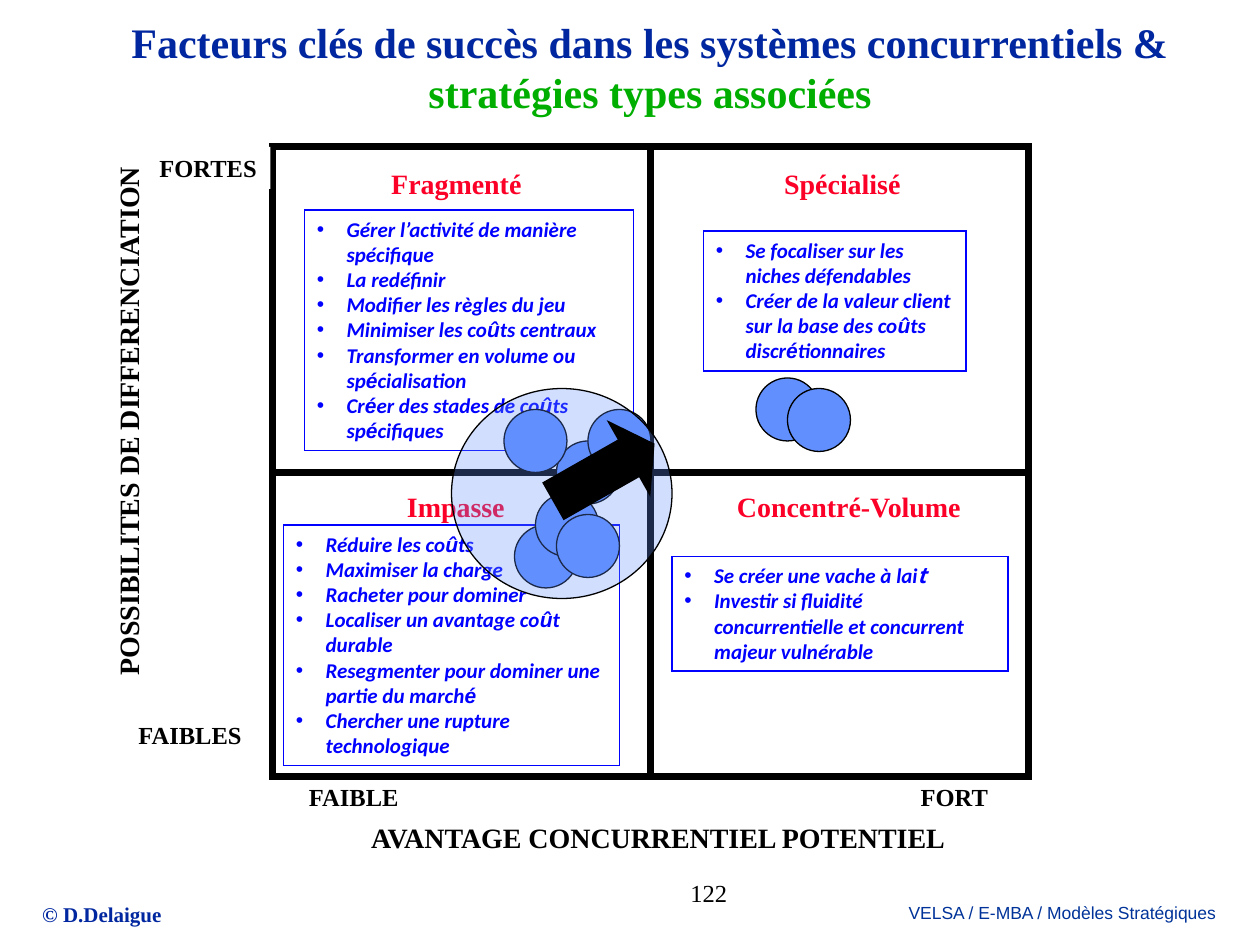
from lxml.etree import SubElement
from pptx import Presentation
from pptx.dml.color import RGBColor
from pptx.enum.shapes import MSO_CONNECTOR as Line, MSO_SHAPE as Preset
from pptx.enum.text import MSO_ANCHOR as Anchor, PP_ALIGN as Align
from pptx.oxml.ns import qn
from pptx.util import Pt

NAVY = RGBColor(0x00, 0x27, 0x9F)
FOOTER_BLUE = RGBColor(0x00, 0x33, 0x99)
GREEN = RGBColor(0x00, 0xAE, 0x00)
RED = RGBColor(0xFC, 0x01, 0x28)
BLUE = RGBColor(0x00, 0x01, 0xFF)
SKY = RGBColor(0x61, 0x8F, 0xFD)
BLACK = RGBColor(0x00, 0x00, 0x00)
WHITE = RGBColor(0xFF, 0xFF, 0xFF)
SERIF = "Times New Roman"

QUADRANTS = [
    ("Fragmenté", (216.5, 91.5, 92), (174, 120, 188, 137.5), "Arial", [
        "Gérer l’activité de manière spécifique",
        "La redéfinir",
        "Modifier les règles du jeu",
        "Minimiser les co|û|ts centraux",
        "Transformer en volume ou sp|é|cialisation",
        "Cr|é|er des stades de co|û|ts sp|é|cifiques"]),
    ("Spécialisé", (441, 91.5, 84), (402, 132, 150, 80), "Arial", [
        "Se focaliser sur les niches défendables",
        "Créer de la valeur client sur la base des co|û|ts discr|é|tionnaires"]),
    ("Impasse", (225.5, 276, 72), (162, 300, 192, 137.5), "Arial", [
        "Réduire les co|û|ts",
        "Maximiser la charge",
        "Racheter pour dominer",
        "Localiser un avantage co|û|t durable",
        "Resegmenter pour dominer une partie du march|é",
        "Chercher une rupture technologique"]),
    ("Concentré-Volume", (414, 276, 146), (384, 318, 192, 65.5), "Noto Sans CJK JP", [
        "Se créer une vache à lai|t",
        "Investir si fluidité concurrentielle et concurrent majeur vulnérable"]),
]
COMPETITORS = [(294, 300), (306, 282), (318, 294), (318, 252),
               (288, 234), (336, 234), (432, 216), (450, 222)]


def write(paragraph, text, *, size, color=BLACK, font=SERIF, bold=True, italic=False):
    run = paragraph.add_run()
    run.text = text
    face = run.font
    face.name, face.size, face.bold, face.italic = font, Pt(size), bold, italic
    face.color.rgb = color


def add_label(slide, text, left, top, width, height, *, align=Align.LEFT,
              fill=None, wrap=False, rotation=0, **style):
    label = slide.shapes.add_textbox(Pt(left), Pt(top), Pt(width), Pt(height))
    label.rotation = rotation
    if fill is not None:
        label.fill.solid()
        label.fill.fore_color.rgb = fill
    label.text_frame.word_wrap = wrap
    paragraph = label.text_frame.paragraphs[0]
    paragraph.alignment = align
    write(paragraph, text, **style)
    return label


def add_outline(slide, preset, left, top, width, height, *,
                fill=None, alpha=None, line=BLACK, weight=0.75):
    outline = slide.shapes.add_shape(preset, Pt(left), Pt(top), Pt(width), Pt(height))
    outline.shadow.inherit = False
    outline.line.color.rgb = line
    outline.line.width = Pt(weight)
    props = outline._element.spPr
    SubElement(props.find(qn("a:ln")), qn("a:miter")).set("lim", "800000")
    if fill is None:
        outline.fill.background()
    else:
        outline.fill.solid()
        outline.fill.fore_color.rgb = fill
    if alpha is not None:
        tint = props.find(qn("a:solidFill"))[0]
        SubElement(tint, qn("a:alpha")).set("val", str(alpha * 1000))
    return outline


def add_divider(slide, x1, y1, x2, y2):
    divider = slide.shapes.add_connector(Line.STRAIGHT, Pt(x1), Pt(y1), Pt(x2), Pt(y2))
    divider.line.color.rgb = BLACK
    divider.line.width = Pt(4)
    SubElement(divider._element.spPr, qn("a:effectLst"))
    return divider


def add_strategies(slide, bounds, strategies, accent_font):
    panel = add_outline(slide, Preset.RECTANGLE, *bounds, line=BLUE)
    frame = panel.text_frame
    frame.word_wrap = True
    frame.vertical_anchor = Anchor.TOP
    for index, strategy in enumerate(strategies):
        paragraph = frame.add_paragraph() if index else frame.paragraphs[0]
        paragraph.alignment = Align.LEFT
        props = paragraph._p.get_or_add_pPr()
        props.set("marL", str(Pt(17)))
        props.set("indent", str(-Pt(17)))
        SubElement(props, qn("a:buFont")).set("typeface", "Arial")
        SubElement(props, qn("a:buChar")).set("char", "•")
        for part, text in enumerate(strategy.split("|")):
            write(paragraph, text, size=12, color=BLUE, italic=True,
                  font=accent_font if part % 2 else "Calibri")


def add_title(slide):
    title = add_label(slide, "Facteurs clés de succès dans les systèmes concurrentiels & ",
                      50.5, 12, 642, 55, align=Align.CENTER, wrap=True, size=24, color=NAVY)
    frame = title.text_frame
    frame.margin_top = frame.margin_bottom = 0
    frame.vertical_anchor = Anchor.BOTTOM
    write(frame.paragraphs[0], "stratégies types associées", size=24, color=GREEN)


def add_matrix(slide):
    add_label(slide, "POSSIBILITES DE DIFFERENCIATION", -80.5, 226.5, 307, 26,
              rotation=270, size=16)
    add_label(slide, "AVANTAGE CONCURRENTIEL POTENTIEL", 205, 465.5, 349, 26, size=16)
    add_label(slide, "FAIBLE", 169.5, 443.5, 66, 24, size=14)
    add_label(slide, "FORT", 519, 443.5, 53, 24, size=14)
    matrix = add_outline(slide, Preset.RECTANGLE, 156, 84, 432, 360, weight=4)
    column_divider = add_divider(slide, 372, 84, 372, 444)
    column_divider.begin_connect(matrix, 0)
    column_divider.end_connect(matrix, 2)
    for name, place, *_ in QUADRANTS:
        add_label(slide, name, *place, 26, size=16, color=RED)
    add_label(slide, "FORTES", 84, 84, 70.5, 24, fill=WHITE, size=14)
    add_label(slide, "FAIBLES", 72, 408, 74, 24, fill=WHITE, size=14)
    add_divider(slide, 156, 270, 588, 270)


def add_competitors(slide):
    for left, top in COMPETITORS:
        add_outline(slide, Preset.OVAL, left, top, 36, 36, fill=SKY)
    add_outline(slide, Preset.OVAL, 258, 222, 126, 120, fill=SKY, alpha=29)
    shift = add_outline(slide, Preset.RIGHT_ARROW, 312, 246, 66, 48, fill=BLACK)
    shift.adjustments[0], shift.adjustments[1] = 0.5, 0.34
    shift.rotation = 330.4


def main():
    """Build the slide on success factors and strategies by competitive system."""
    deck = Presentation()
    deck.slide_width, deck.slide_height = Pt(720), Pt(540)
    slide = deck.slides.add_slide(deck.slide_layouts[6])
    add_label(slide, "© D.Delaigue", 17, 511.5, 83, 22, size=12, color=NAVY)
    add_label(slide, "VELSA / E-MBA / Modèles Stratégiques", 509, 512, 196, 19.5,
              align=Align.CENTER, size=10, color=FOOTER_BLUE, font="Arial", bold=False)
    add_label(slide, "122", 330, 498, 150, 36, align=Align.CENTER, wrap=True,
              size=14, bold=False)
    add_title(slide)
    for _, _, bounds, accent_font, strategies in reversed(QUADRANTS):
        add_strategies(slide, bounds, strategies, accent_font)
    add_matrix(slide)
    add_competitors(slide)
    deck.save("out.pptx")


if __name__ == "__main__":
    main()
